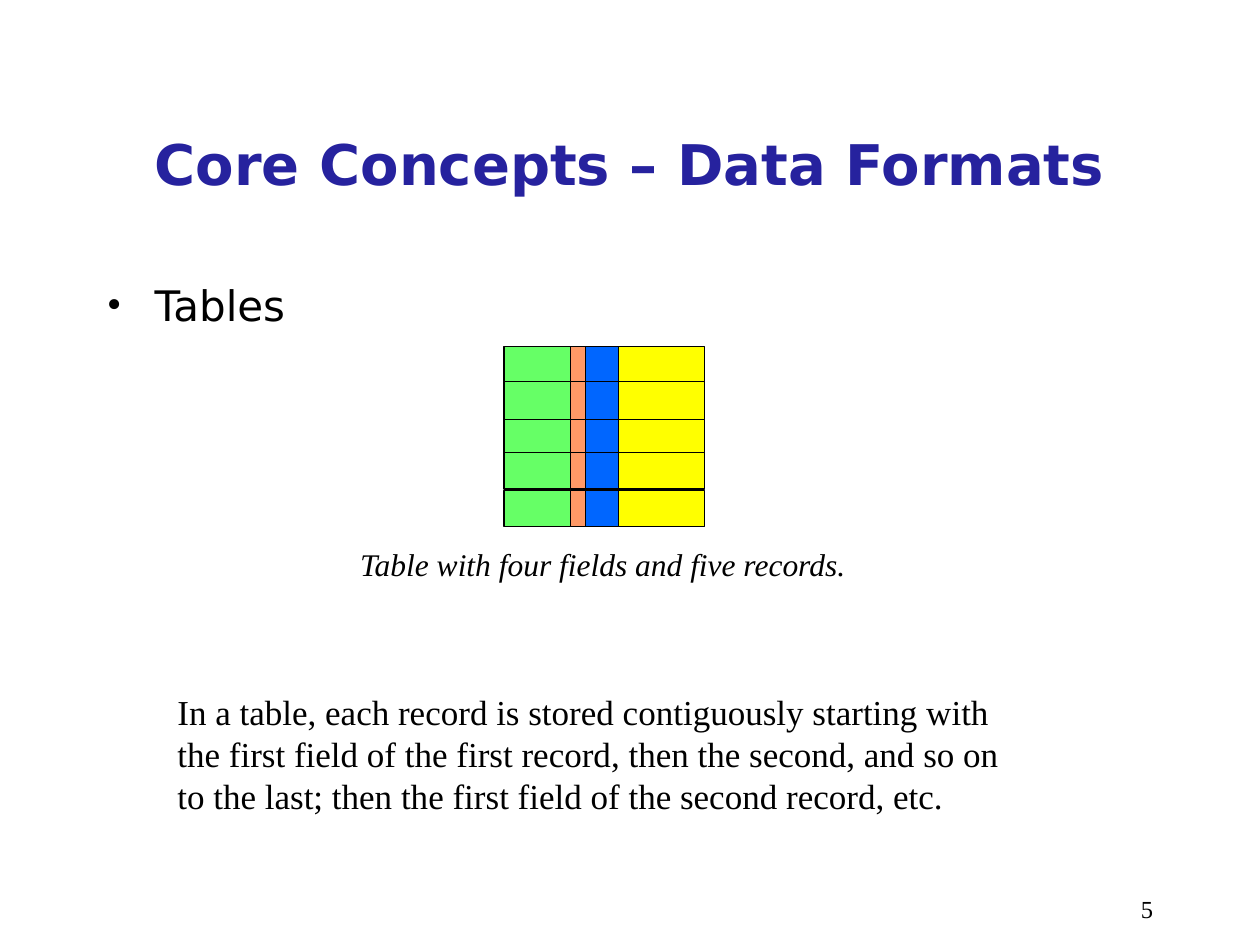
from lxml.etree import SubElement
from pptx import Presentation
from pptx.dml.color import RGBColor
from pptx.enum.shapes import MSO_SHAPE
from pptx.enum.text import MSO_ANCHOR, PP_ALIGN
from pptx.oxml.ns import qn
from pptx.util import Inches, Pt


def color(hex_value):
    return RGBColor.from_string(hex_value)


def add_text(text, left, top, width, height, size, font="Times New Roman", ink="000000",
             bold=False, italic=False, align=PP_ALIGN.LEFT, anchor=MSO_ANCHOR.TOP):
    box = slide.shapes.add_textbox(Inches(left), Inches(top), Inches(width), Inches(height))
    frame = box.text_frame
    frame.word_wrap = True
    frame.vertical_anchor = anchor
    paragraph = frame.paragraphs[0]
    paragraph.alignment = align
    run = paragraph.add_run()
    run.text = text
    run.font.name = font
    run.font.size = Pt(size)
    run.font.bold = bold
    run.font.italic = italic
    run.font.color.rgb = color(ink)
    return frame


presentation = Presentation()
presentation.slide_width = Inches(10)
presentation.slide_height = Inches(7.5)
slide = presentation.slides.add_slide(presentation.slide_layouts[6])

add_text("Core Concepts – Data Formats", 0.75, 0.67, 8.5, 1.25, 32, font="DejaVu Sans",
         ink="26229E", bold=True, align=PP_ALIGN.CENTER, anchor=MSO_ANCHOR.MIDDLE)

topic = add_text("Tables", 0.75, 2.17, 8.5, 4.5, 24, font="DejaVu Sans")
topic_format = topic.paragraphs[0]._p.get_or_add_pPr()
topic_format.set("marL", str(Inches(0.38)))
topic_format.set("indent", str(Inches(-0.38)))
spacing = SubElement(topic_format, qn("a:spcBef"))
SubElement(spacing, qn("a:spcPct")).set("val", "20000")
SubElement(topic_format, qn("a:buFont")).set("typeface", "Times New Roman")
SubElement(topic_format, qn("a:buChar")).set("char", "•")

page_number = add_text("5", 7.17, 6.83, 2.08, 0.5, 14, align=PP_ALIGN.RIGHT,
                       anchor=MSO_ANCHOR.BOTTOM)
page_number.margin_bottom = 0

fields = [(4, 0.53, "66FF66"), (4.53, 0.14, "FF9966"),
          (4.65, 0.26, "0066FF"), (4.91, 0.68, "FFFF00")]
records = [(2.75, 0.28), (3.03, 0.3), (3.33, 0.28), (3.59, 0.29), (3.89, 0.29)]
for top, height in records:
    for left, width, fill in fields:
        cell = slide.shapes.add_shape(MSO_SHAPE.RECTANGLE, Inches(left), Inches(top),
                                      Inches(width), Inches(height))
        cell.shadow.inherit = False
        cell.fill.solid()
        cell.fill.fore_color.rgb = color(fill)
        cell.line.color.rgb = color("000000")
        cell.line.width = Pt(0.75)

add_text("In a table, each record is stored contiguously starting with the first field of the "
         "first record, then the second, and so on to the last; then the first field of the "
         "second record, etc.", 1.31, 5.43, 6.94, 1.11, 20)
add_text("Table with four fields and five records.", 2.76, 4.28, 4.19, 0.4, 18, italic=True)

presentation.save("out.pptx")
